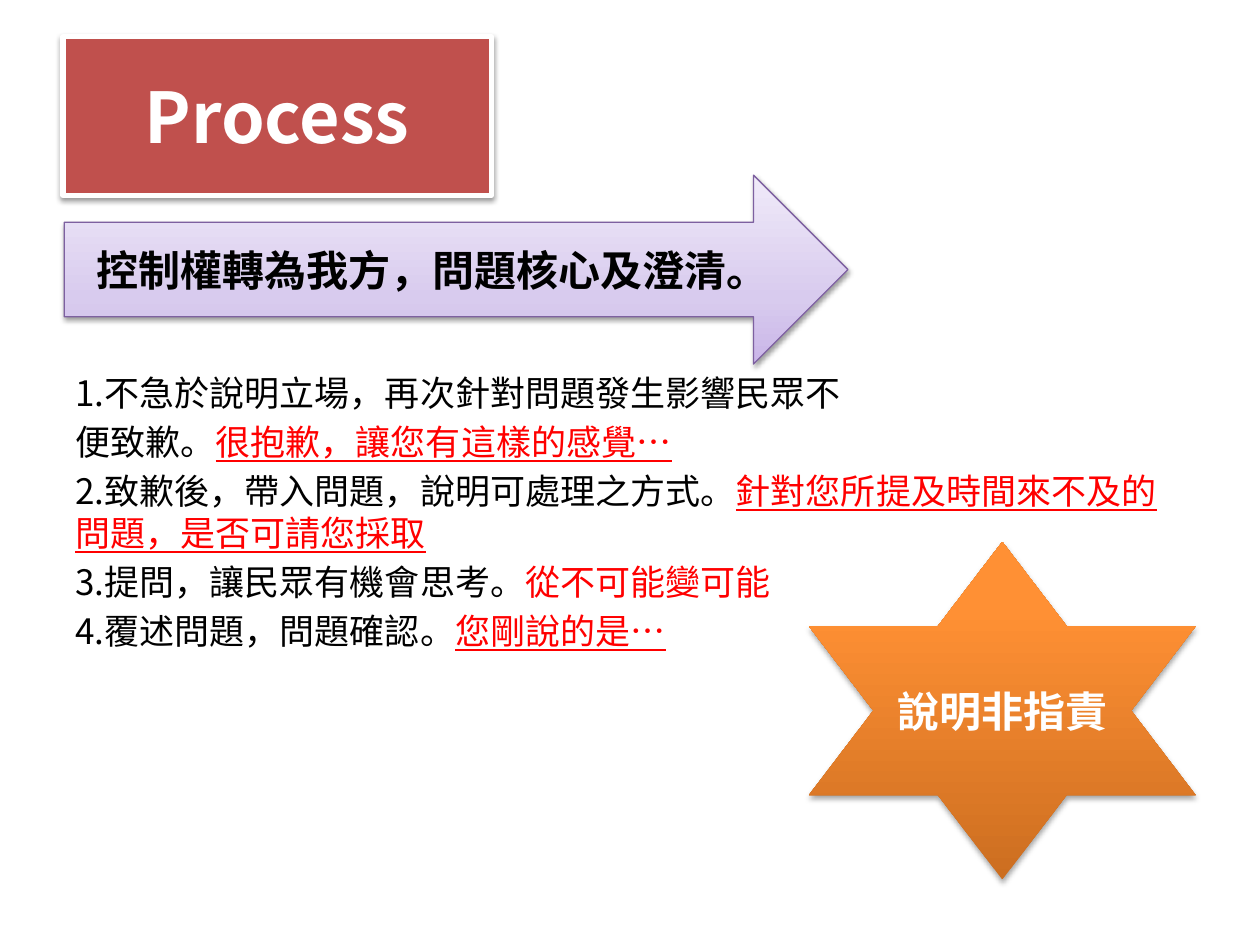
from lxml import etree
from pptx import Presentation
from pptx.dml.color import RGBColor
from pptx.enum import shapes, text
from pptx.oxml import ns
from pptx.util import Inches, Pt

FONT = "Noto Sans CJK SC"
BLACK = RGBColor(0x00, 0x00, 0x00)
WHITE = RGBColor(0xFF, 0xFF, 0xFF)
RED = RGBColor(0xFF, 0x00, 0x00)
BRICK = RGBColor(0xC0, 0x50, 0x4D)
PURPLE = RGBColor(0x7D, 0x60, 0xA0)
LILAC_STOPS = [(0, RGBColor(0xC9, 0xB5, 0xE8)), (35, RGBColor(0xD8, 0xCB, 0xEE)),
               (100, RGBColor(0xF0, 0xEA, 0xF9))]
ORANGE_STOPS = [(0, RGBColor(0xCC, 0x6E, 0x20)), (80, RGBColor(0xFF, 0x90, 0x34)),
                (100, RGBColor(0xFF, 0x91, 0x36))]


def add_run(p, words, size, color, **formats):
    r = p.add_run()
    r.text = words
    r.font.color.rgb = color
    for name, value in dict(formats, name=FONT, size=Pt(size)).items():
        setattr(r.font, name, value)
    ea = etree.SubElement(r.font._element, ns.qn("a:ea"))
    ea.set("typeface", FONT)


def add_element(parent, tag, **attributes):
    el = etree.SubElement(parent, ns.qn(tag))
    for name, value in attributes.items():
        el.set(name, str(value))
    return el


prs = Presentation()
prs.slide_width, prs.slide_height = Inches(10), Inches(7.5)
s = prs.slides.add_slide(prs.slide_layouts[6])

# Each step is a list of (words, is an example phrase, is underlined)
steps = [
    [("1.不急於說明立場，再次針對問題發生影響民眾不", False, False)],
    [("便致歉。", False, False), ("很抱歉，讓您有這樣的感覺…", True, True)],
    [("2.致歉後，帶入問題，說明可處理之方式。", False, False),
     ("針對您所提及時間來不及的問題，是否可請您採取", True, True)],
    [("3.提問，讓民眾有機會思考。", False, False), ("從不可能變可能", True, False)],
    [("4.覆述問題，問題確認。", False, False), ("您剛說的是…", True, True)],
]
tf = s.shapes.add_textbox(Inches(0.5), Inches(2.9), Inches(9), Inches(3.8)).text_frame
tf.word_wrap = True
for i, step in enumerate(steps):
    p = tf.add_paragraph() if i else tf.paragraphs[0]
    p.line_spacing = Pt(24)
    p.space_before = Pt(4 if i else 0)
    for words, example, underline in step:
        add_run(p, words, 20, RED if example else BLACK, underline=underline)

# kind, box, fill (colour or gradient stops), line (colour, width),
# shadow opacity and distance, words, size, text colour
kinds = shapes.MSO_SHAPE
blocks = [
    (kinds.RIGHT_ARROW, (0.51, 1.39, 6.22, 1.5), LILAC_STOPS, (PURPLE, 0.75),
     (38, 1.6), "控制權轉為我方，問題核心及澄清。", 24, BLACK),
    (kinds.FLOWCHART_PROCESS, (0.5, 0.29, 3.4, 1.26), BRICK, (WHITE, 3),
     (38, 1.6), "Process", 40, WHITE),
    (kinds.STAR_6_POINT, (6.42, 4.3, 3.07, 2.68), ORANGE_STOPS, None,
     (35, 1.8), "說明非指責", 24, WHITE),
]
for kind, box, fill, line, (opacity, distance), words, size, color in blocks:
    sp = s.shapes.add_shape(kind, *map(Inches, box))
    props = sp._element.spPr
    if isinstance(fill, RGBColor):
        sp.fill.solid()
        sp.fill.fore_color.rgb = fill
    else:
        sp.fill.gradient()
        sp.fill.gradient_angle = 90
        stops = props.find(".//" + ns.qn("a:gsLst"))
        for old in list(stops):
            stops.remove(old)
        for position, stop_color in fill:
            gs = add_element(stops, "a:gs", pos=position * 1000)
            add_element(gs, "a:srgbClr", val=stop_color)
    if line:
        sp.line.color.rgb, sp.line.width = line[0], Pt(line[1])
    else:
        sp.line.fill.background()

    sp.shadow.inherit = False
    shadow = add_element(props.find(ns.qn("a:effectLst")), "a:outerShdw",
                         blurRad=Pt(3.1), dist=Pt(distance), dir=90 * 60000,
                         rotWithShape=0)
    shade = add_element(shadow, "a:srgbClr", val=BLACK)
    add_element(shade, "a:alpha", val=opacity * 1000)

    tf = sp.text_frame
    tf.word_wrap = True
    tf.vertical_anchor = text.MSO_ANCHOR.MIDDLE
    p = tf.paragraphs[0]
    p.alignment = text.PP_ALIGN.CENTER
    add_run(p, words, size, color, bold=True)

prs.save("out.pptx")
